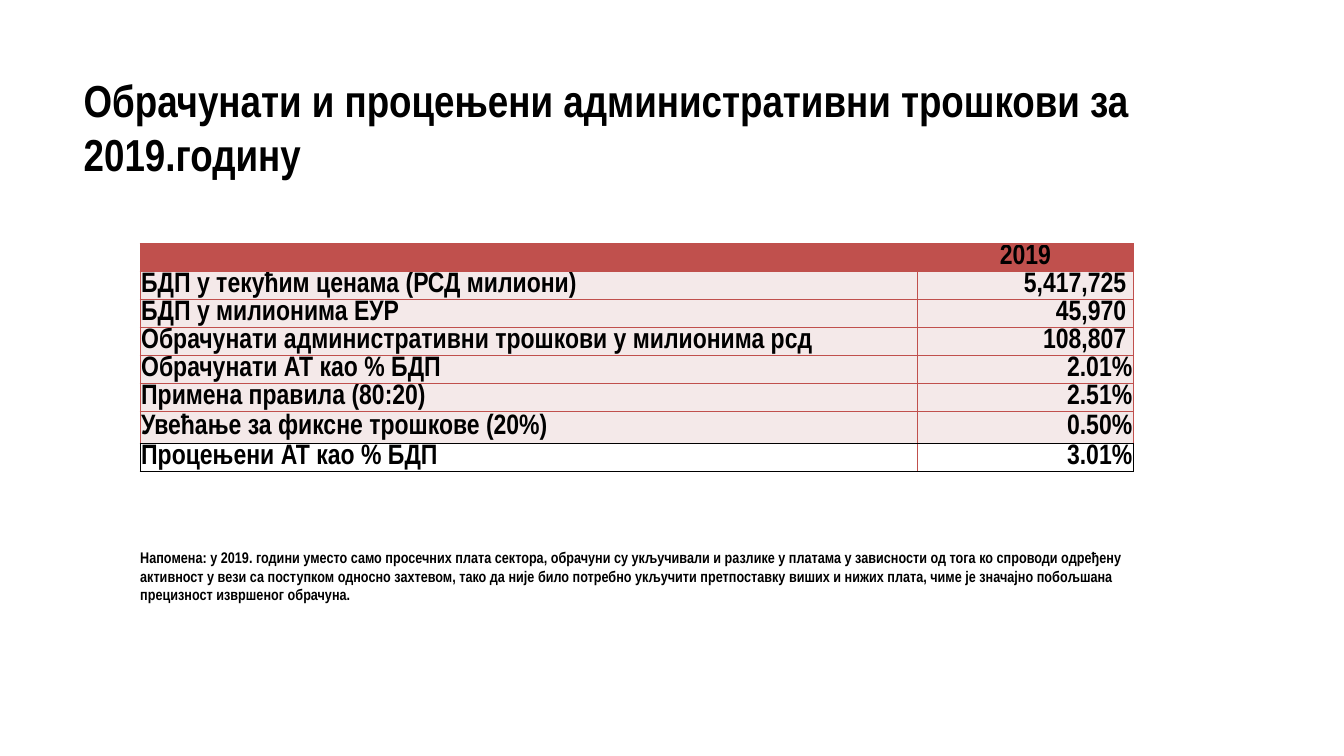
"""Build the slide with the 2019 administrative cost estimate."""
from lxml.etree import SubElement
from pptx import Presentation
from pptx.dml.color import RGBColor
from pptx.enum.shapes import MSO_SHAPE
from pptx.enum.text import MSO_ANCHOR as ANCHOR, PP_ALIGN as ALIGN
from pptx.oxml.ns import qn
from pptx.util import Inches, Pt

TITLE = "Обрачунати и процењени административни трошкови за 2019.годину"
YEAR = "2019"
COSTS = [
    ("БДП у текућим ценама (РСД милиони)", "5,417,725"),
    ("БДП у милионима ЕУР", "45,970"),
    ("Обрачунати административни трошкови у милионима рсд", "108,807"),
    ("Обрачунати АТ као % БДП", "2.01%"),
    ("Примена правила (80:20)", "2.51%"),
    ("Увећање за фиксне трошкове (20%)", "0.50%"),
    ("Процењени АТ као % БДП", "3.01%"),
]
NOTE = [
    "Напомена: у 2019. години уместо само просечних плата сектора, обрачуни су укључивали и "
    "разлике у платама у зависности од тога ко спроводи одређену",
    "активност у вези са поступком односно захтевом, тако да није било потребно укључити "
    "претпоставку виших и нижих плата, чиме је значајно побољшана",
    "прецизност извршеног обрачуна.",
]
FONT, BLACK, WHITE, RED, PINK = "Arial Narrow", "000000", "FFFFFF", "C0504D", "F4E9E9"
LEFT, WIDTH, LABEL_WIDTH = 1.39, 9.85, 7.71
ROW, FIXED_COST_ROW = 0.27, 0.32


def color(code):
    return RGBColor.from_string(code)


def write(paragraph, text, size, align=ALIGN.LEFT):
    paragraph.alignment = align
    run = paragraph.add_run()
    run.text = text
    run.font.name, run.font.size, run.font.bold = FONT, Pt(size), True
    run.font.color.rgb = color(BLACK)


def clear_margins(frame):
    frame.word_wrap = True
    frame.margin_left = frame.margin_right = frame.margin_top = frame.margin_bottom = 0


def add_borders(cell, sides):
    properties = cell._tc.get_or_add_tcPr()
    for position, (side, code) in enumerate(sides.items()):
        line = properties.makeelement(qn(f"a:{side}"), {"w": str(Pt(1))})
        fill = SubElement(line, qn("a:solidFill"))
        SubElement(fill, qn("a:srgbClr"), val=code)
        properties.insert(position, line)


def fill_cell(cell, text, fill, align, sides):
    cell.fill.solid()
    cell.fill.fore_color.rgb = color(fill)
    cell.vertical_anchor = ANCHOR.MIDDLE
    cell.margin_left = cell.margin_right = cell.margin_top = Inches(0.01)
    cell.margin_bottom = 0
    paragraph = cell.text_frame.paragraphs[0]
    paragraph.line_spacing = 0.8
    if text:
        write(paragraph, text, 20, align)
    else:
        paragraph._p.get_or_add_endParaRPr().set("sz", "1000")
    add_borders(cell, sides)


def add_title(slide):
    frame = slide.shapes.add_textbox(
        Inches(0.83), Inches(0.72), Inches(11.94), Inches(0.93)).text_frame
    clear_margins(frame)
    write(frame.paragraphs[0], TITLE, 32)


def add_costs(slide):
    rows = [("", YEAR), *COSTS]
    total = len(rows) - 1
    fixed = total - 1
    heights = [FIXED_COST_ROW if row == fixed else ROW for row in range(len(rows))]
    table = slide.shapes.add_table(len(rows), 2, Inches(LEFT), Inches(2.42),
                                   Inches(WIDTH), Inches(sum(heights))).table
    table.columns[0].width = Inches(LABEL_WIDTH)
    table.columns[1].width = Inches(WIDTH - LABEL_WIDTH)
    for row, (texts, height) in enumerate(zip(rows, heights)):
        table.rows[row].height = Inches(height)
        fill = RED if row == 0 else WHITE if row == total else PINK
        for column, text in enumerate(texts):
            align = ALIGN.LEFT if column == 0 else ALIGN.CENTER if row == 0 else ALIGN.RIGHT
            sides = {
                "lnL": BLACK if row == total and column == 0 else RED,
                "lnR": BLACK if row == total and column == 1 else RED,
                "lnT": BLACK if row == total else RED,
                "lnB": BLACK if row >= fixed else RED,
            }
            cell = table.cell(row, column)
            fill_cell(cell, text, fill, align, sides)
            if "," in text:
                cell.margin_right = Inches(0.07)


def add_note(slide):
    note = slide.shapes.add_shape(MSO_SHAPE.RECTANGLE, Inches(LEFT), Inches(5.49),
                                  Inches(WIDTH), Inches(0.45))
    note.shadow.inherit = False
    note.fill.solid()
    note.fill.fore_color.rgb = color(WHITE)
    note.line.fill.background()
    frame = note.text_frame
    clear_margins(frame)
    frame.vertical_anchor = ANCHOR.MIDDLE
    for index, text in enumerate(NOTE):
        write(frame.add_paragraph() if index else frame.paragraphs[0], text, 11)


def main():
    deck = Presentation()
    deck.slide_width, deck.slide_height = Inches(13.33), Inches(7.5)
    slide = deck.slides.add_slide(deck.slide_layouts[6])
    add_title(slide)
    add_costs(slide)
    add_note(slide)
    deck.save("out.pptx")


if __name__ == "__main__":
    main()
